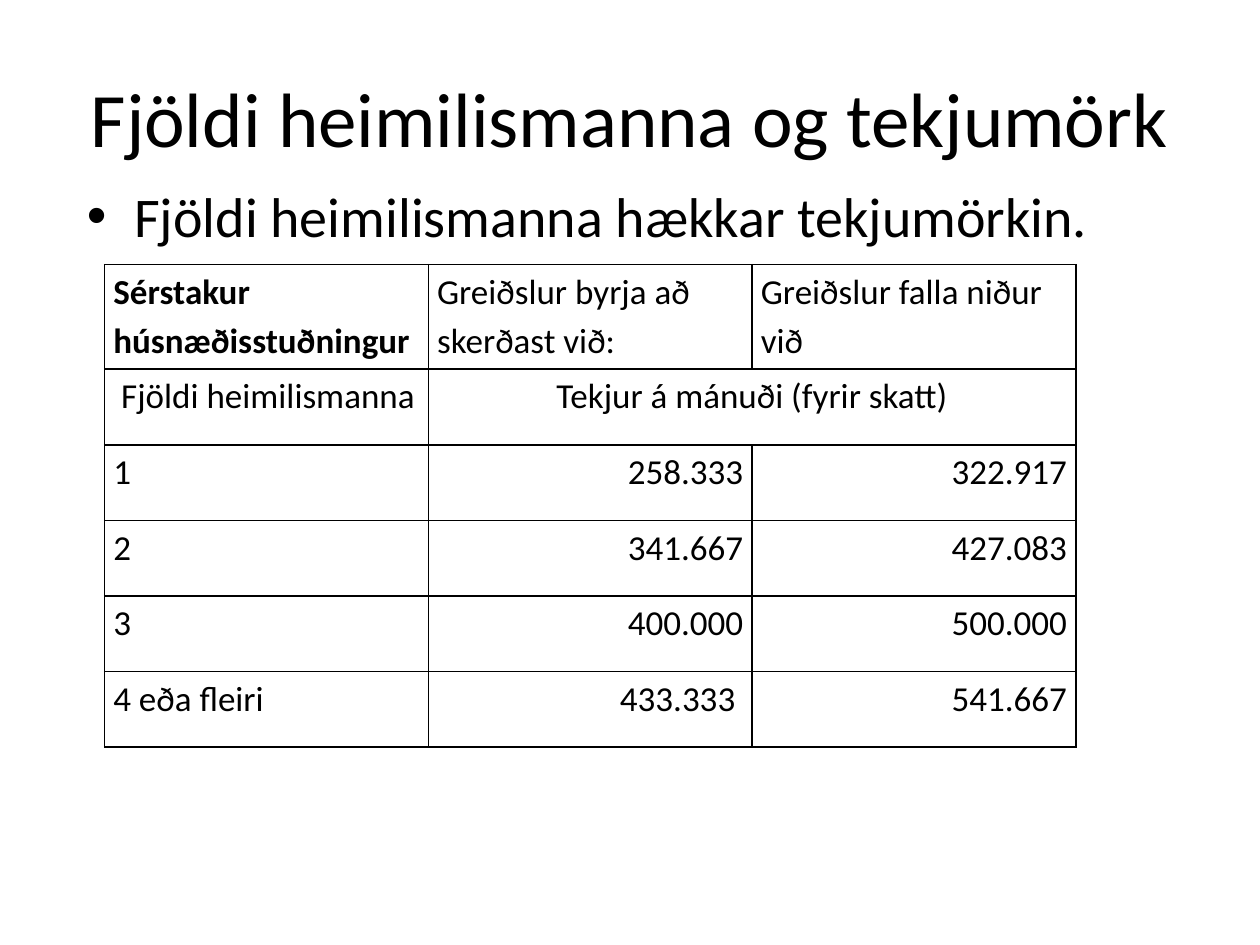
from lxml import etree
from pptx import Presentation, util as u
from pptx.dml.color import RGBColor
from pptx.enum import text as t
from pptx.oxml import ns

BLACK = "000000"
LEFT, CENTER, RIGHT = t.PP_ALIGN.LEFT, t.PP_ALIGN.CENTER, t.PP_ALIGN.RIGHT


def write(frame, text, size=20, color=BLACK, bold=False, align=LEFT, spacing=None):
    frame.word_wrap = True
    paragraph = frame.paragraphs[0]
    paragraph.alignment = align
    paragraph.line_spacing = spacing
    paragraph.space_before = u.Pt(0)
    run = paragraph.add_run()
    run.text = text
    run.font.name = "Calibri"
    run.font.size = u.Pt(size)
    run.font.bold = bold
    run.font.color.rgb = RGBColor.from_string(color)


def place(item, left, top, width, height):
    item.left, item.top = u.Inches(left), u.Inches(top)
    item.width, item.height = u.Inches(width), u.Inches(height)


prs = Presentation()
prs.slide_width, prs.slide_height = u.Inches(10), u.Inches(7.5)
slide = prs.slides.add_slide(prs.slide_layouts[1])

# Title and the single bullet
title, body = slide.placeholders
place(title, 0.5, 0.3, 9, 1.25)
title.text_frame.vertical_anchor = t.MSO_ANCHOR.MIDDLE
write(title.text_frame, "Fjöldi heimilismanna og tekjumörk", size=44, align=CENTER)
place(body, 0.59, 1.39, 9, 4.6)
write(body.text_frame, "Fjöldi heimilismanna hækkar tekjumörkin.", size=32)

# Income limits by household size
limits = [
    ("Sérstakur húsnæðisstuðningur", "Greiðslur byrja að skerðast við:",
     "Greiðslur falla niður við"),
    (" Fjöldi heimilismanna", "Tekjur á mánuði (fyrir skatt)", ""),
    ("1", "258.333", "322.917"),
    ("2", "341.667", "427.083"),
    ("3", "400.000", "500.000"),
    ("4 eða fleiri", "433.333 ", "541.667"),
]
COL, HEADER_ROW, ROW = 2.57, 0.83, 0.6
table = slide.shapes.add_table(
    len(limits), 3, u.Inches(0.83), u.Inches(2.1),
    u.Inches(3 * COL), u.Inches(HEADER_ROW + 5 * ROW)).table
table.first_row = table.horz_banding = False
for column in table.columns:
    column.width = u.Inches(COL)
for r, row in enumerate(table.rows):
    row.height = u.Inches(ROW if r else HEADER_ROW)
table.cell(1, 1).merge(table.cell(1, 2))

for r, values in enumerate(limits):
    for c, value in enumerate(values):
        cell = table.cell(r, c)
        cell.margin_left = cell.margin_right = u.Inches(0.07)
        cell.margin_top = cell.margin_bottom = 0
        # Thin black borders go before the fill
        for side in ("lnL", "lnR", "lnT", "lnB"):
            line = etree.SubElement(cell._tc.get_or_add_tcPr(), ns.qn(f"a:{side}"),
                                    w=str(u.Pt(1)))
            fill = etree.SubElement(line, ns.qn("a:solidFill"))
            etree.SubElement(fill, ns.qn("a:srgbClr"), val=BLACK)
        cell.fill.background()
        if value:
            align = LEFT if r == 0 or c == 0 else CENTER if r == 1 else RIGHT
            write(cell.text_frame, value, bold=r == c == 0, align=align, spacing=1.15)

prs.save("out.pptx")
